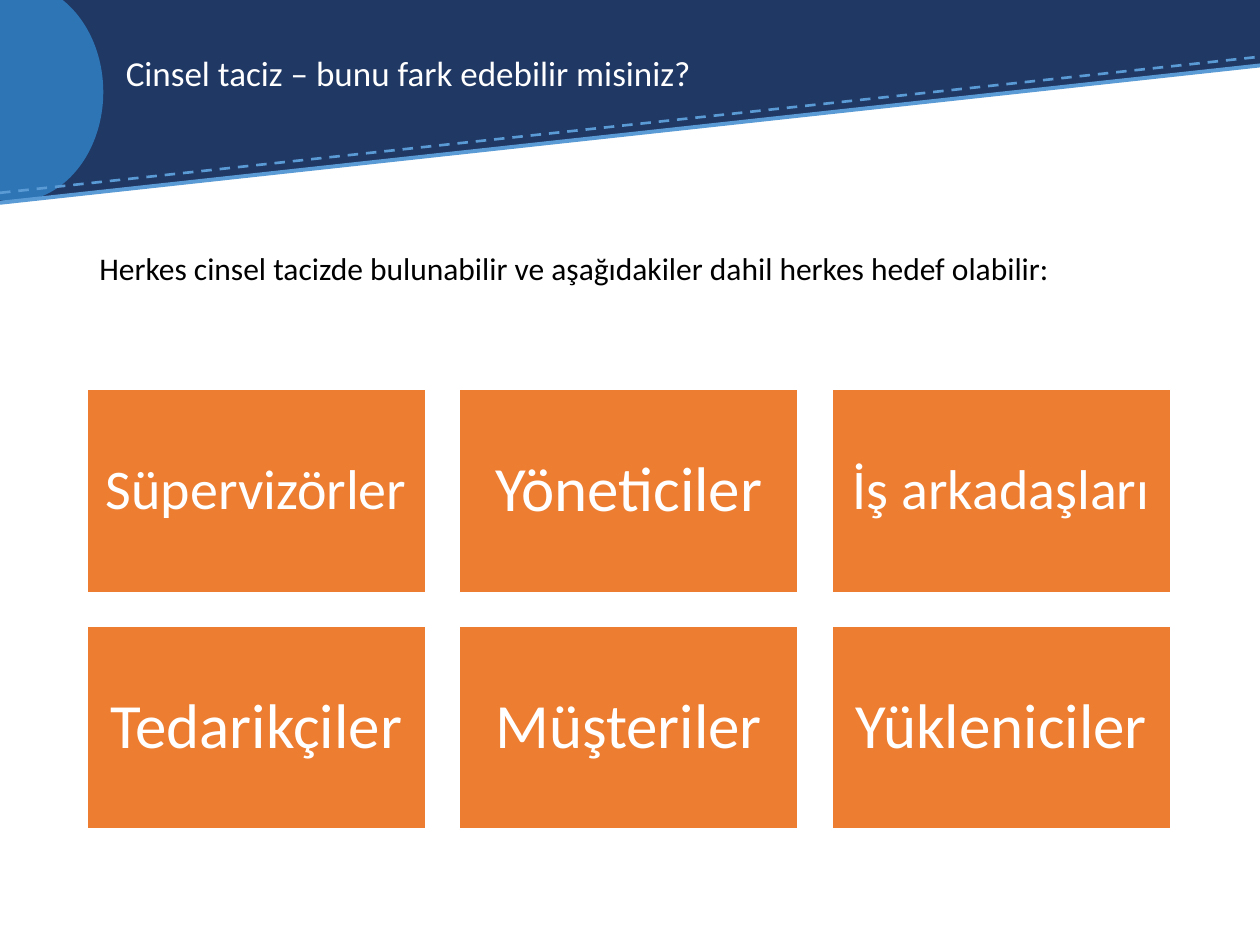
"""Build the slide on who can be involved in sexual harassment."""
import pptx
import pptx.dml.color
import pptx.enum.dml
import pptx.enum.shapes
import pptx.enum.text
import pptx.oxml.ns
import pptx.util

Pt = pptx.util.Pt
RGBColor = pptx.dml.color.RGBColor
Shape = pptx.enum.shapes.MSO_SHAPE
Anchor = pptx.enum.text.MSO_ANCHOR
Align = pptx.enum.text.PP_ALIGN
qn = pptx.oxml.ns.qn

TITLE = "Cinsel taciz – bunu fark edebilir misiniz?"
INTRO = "Herkes cinsel tacizde bulunabilir ve aşağıdakiler dahil herkes hedef olabilir:"
CARDS = [
    ("Süpervizörler", 32), ("Yöneticiler", 36), ("İş arkadaşları", 32),
    ("Tedarikçiler", 36), ("Müşteriler", 36), ("Yükleniciler", 36),
]

NAVY = RGBColor(0x20, 0x38, 0x64)
BLUE = RGBColor(0x2E, 0x75, 0xB6)
SKY = RGBColor(0x5B, 0x9B, 0xD5)
ORANGE = RGBColor(0xED, 0x7D, 0x31)
WHITE = RGBColor(0xFF, 0xFF, 0xFF)
BLACK = RGBColor(0, 0, 0)

SLIDE_WIDTH, SLIDE_HEIGHT = 720, 540
COLUMNS = 3
CARD_LEFT, CARD_TOP = 49.7, 222.6
CARD_WIDTH, CARD_HEIGHT = 193.5, 116
CARD_GAP = 19.35


def add_filled(page, kind, place, color):
    shape = page.shapes.add_shape(kind, *map(Pt, place))
    shape.shadow.inherit = False
    shape.fill.solid()
    shape.fill.fore_color.rgb = color
    shape.line.fill.background()
    return shape


def add_rule(page, start, end, width, dash=None):
    ends = map(Pt, (0, start, SLIDE_WIDTH, end))
    rule = page.shapes.add_connector(pptx.enum.shapes.MSO_CONNECTOR.STRAIGHT, *ends)
    rule.line.color.rgb = SKY
    rule.line.width = Pt(width)
    if dash:
        rule.line.dash_style = dash
    rule.element.spPr.append(pptx.oxml.parse_xml(
        '<a:effectLst xmlns:a="http://schemas.openxmlformats.org/drawingml/2006/main"/>'))


def write(shape, text, size, color, anchor, align=Align.LEFT, spacing=None):
    frame = shape.text_frame
    frame.word_wrap = True
    frame.vertical_anchor = anchor
    para = frame.paragraphs[0]
    para.text = text
    para.alignment = align
    para.line_spacing = spacing
    para.font.name = "Calibri"
    para.font.size = Pt(size)
    para.font.color.rgb = color


def add_header(page):
    add_filled(page, Shape.RECTANGLE, (0, 0, SLIDE_WIDTH, 37.4), NAVY)
    wedge = add_filled(page, Shape.RIGHT_TRIANGLE, (0, 36.7, SLIDE_WIDTH, 78.5), NAVY)
    wedge.element.spPr.find(qn("a:xfrm")).set("flipV", "1")
    add_filled(page, Shape.OVAL, (-42.5, -10, 101.5, 125.2), BLUE)
    add_rule(page, 110.2, 32.4, 1.5, pptx.enum.dml.MSO_LINE.DASH)
    add_rule(page, 115.9, 37.4, 2.25)
    title = page.shapes.add_textbox(Pt(64.8), Pt(14.4), Pt(581), Pt(57.6))
    write(title, TITLE, 20, WHITE, Anchor.MIDDLE, spacing=0.9)


def add_card(page, index, label, size):
    row, column = divmod(index, COLUMNS)
    left = CARD_LEFT + column * (CARD_WIDTH + CARD_GAP)
    top = CARD_TOP + row * (CARD_HEIGHT + CARD_GAP)
    card = add_filled(page, Shape.RECTANGLE, (left, top, CARD_WIDTH, CARD_HEIGHT), ORANGE)
    card.line.color.rgb = WHITE
    card.line.width = Pt(1)
    write(card, label, size, WHITE, Anchor.MIDDLE, Align.CENTER, 0.9)
    frame = card.text_frame
    inset = Pt(size * 0.3)
    frame.margin_left = frame.margin_right = inset
    frame.margin_top = frame.margin_bottom = inset


def main():
    deck = pptx.Presentation()
    deck.slide_width, deck.slide_height = Pt(SLIDE_WIDTH), Pt(SLIDE_HEIGHT)
    page = deck.slides.add_slide(deck.slide_layouts[6])
    add_header(page)
    for index, (label, size) in enumerate(CARDS):
        add_card(page, index, label, size)
    intro = page.shapes.add_textbox(Pt(49.7), Pt(139), Pt(652.3), Pt(50.4))
    write(intro, INTRO, 18, BLACK, Anchor.TOP)
    deck.save("out.pptx")


if __name__ == "__main__":
    main()
